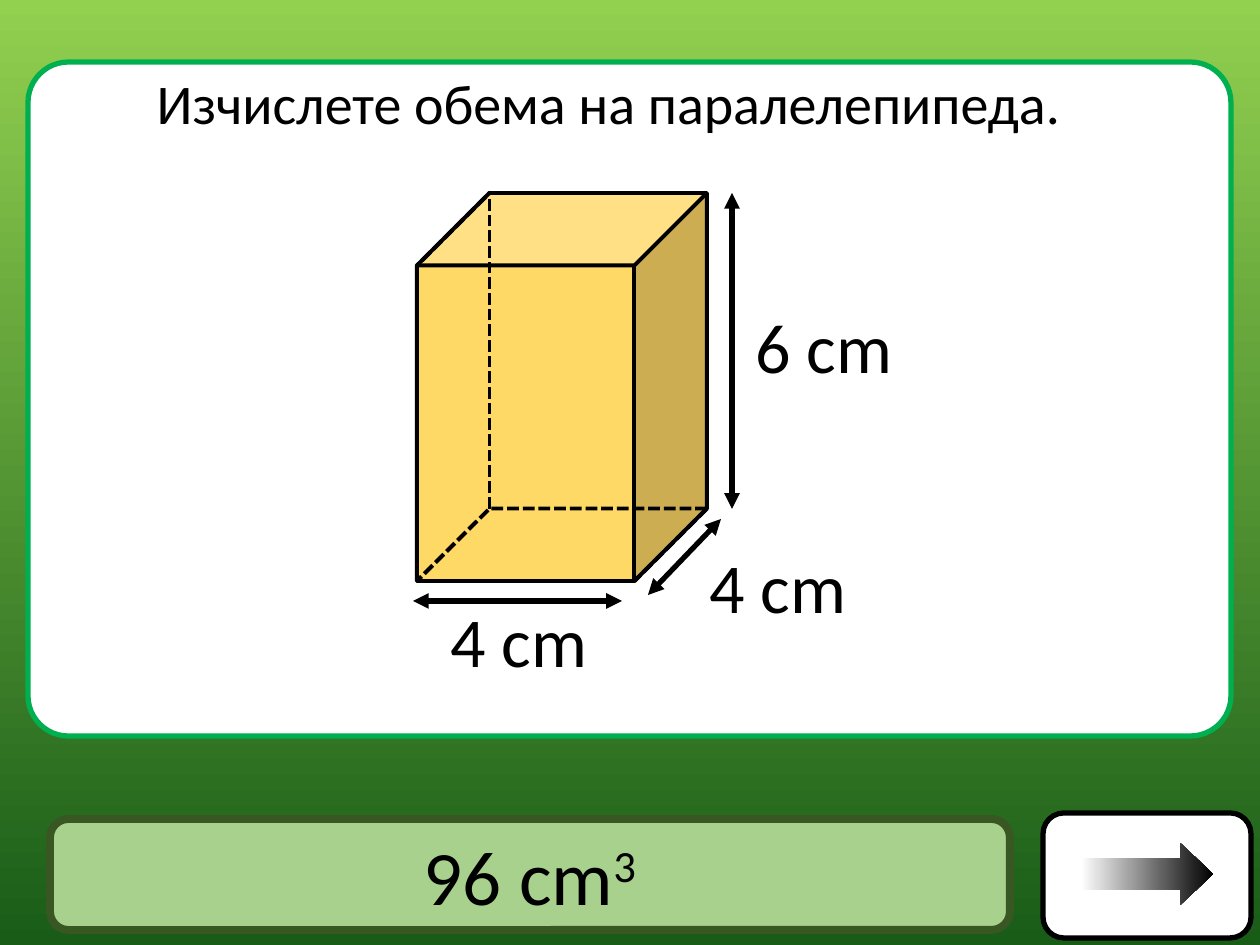
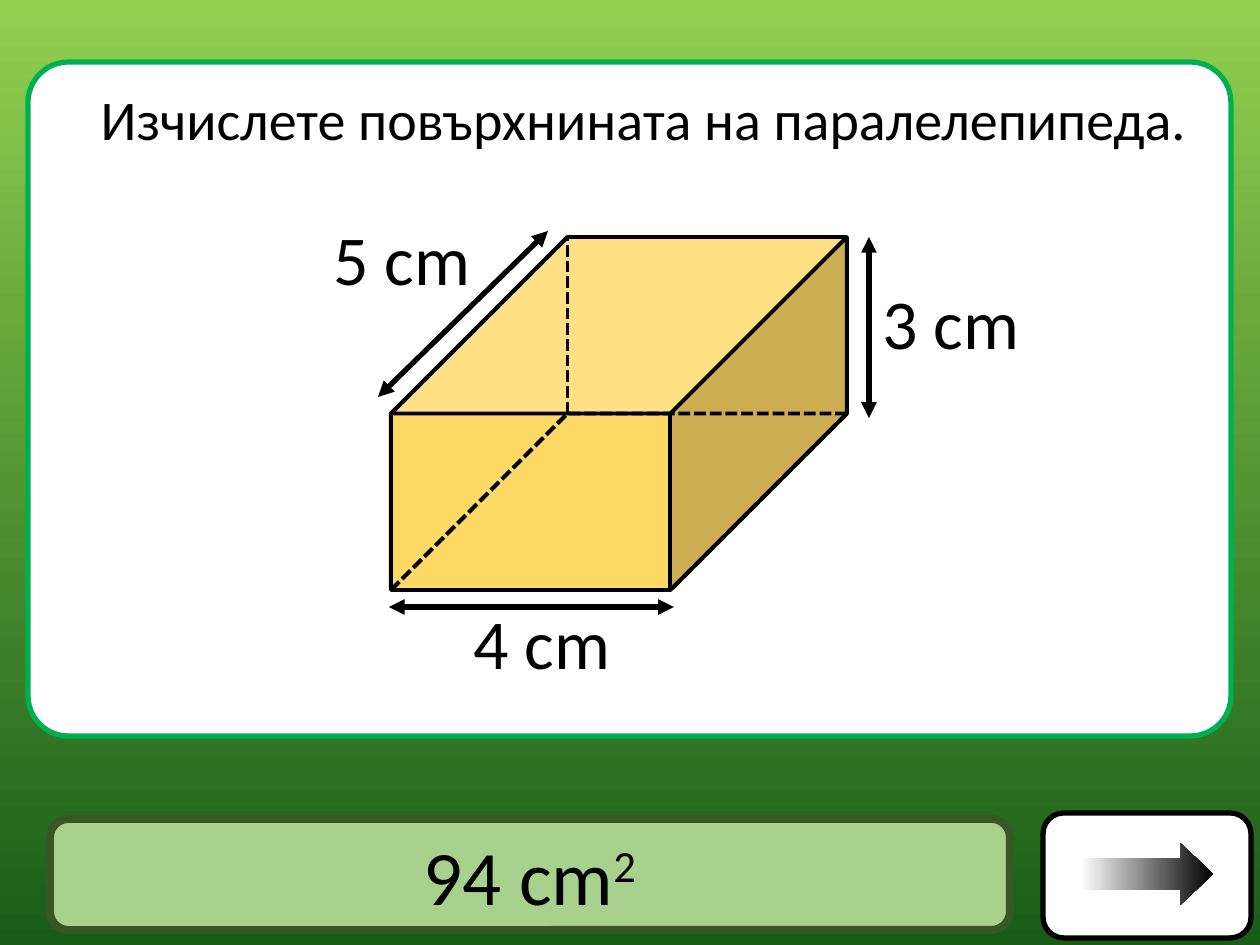
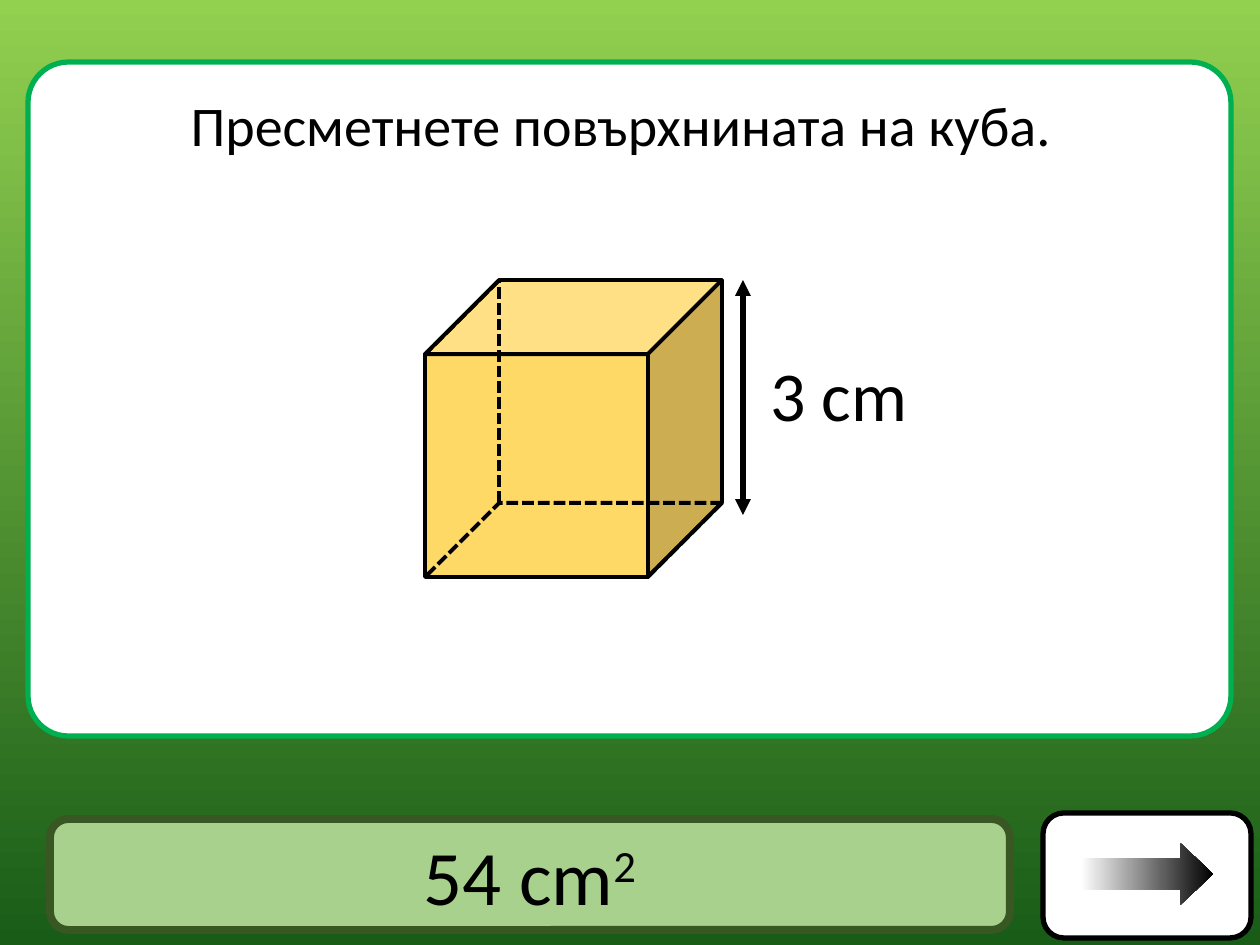
from pptx import Presentation
from pptx.dml.color import RGBColor
from pptx.enum.dml import MSO_LINE
from pptx.enum.shapes import MSO_CONNECTOR, MSO_SHAPE
from pptx.enum.text import MSO_ANCHOR, MSO_AUTO_SIZE, PP_ALIGN
from pptx.oxml.ns import qn
from pptx.util import Inches, Pt
from lxml import etree

# Enum members
ROUND, ARROW, CUBE = (MSO_SHAPE.ROUNDED_RECTANGLE, MSO_SHAPE.RIGHT_ARROW,
                      MSO_SHAPE.CUBE)
STRAIGHT, DASH = MSO_CONNECTOR.STRAIGHT, MSO_LINE.SQUARE_DOT
TOP, MIDDLE = MSO_ANCHOR.TOP, MSO_ANCHOR.MIDDLE
LEFT, CENTER = PP_ALIGN.LEFT, PP_ALIGN.CENTER
GROW = MSO_AUTO_SIZE.SHAPE_TO_FIT_TEXT

# Shared look
WIDE, HIGH = 1260, 945
SCALE = Inches(10) / WIDE
FONT = "Calibri"
BLACK, WHITE = "000000", "FFFFFF"
LIME, FOREST = "92D050", "185C18"
MINT, OLIVE, GREEN, GOLD = "A9D18E", "385723", "00B050", "FFD966"
PANEL = (28, 62, 1203, 674)
ANSWER = (50, 819, 960, 111)
BUTTON = (1043, 813, 208, 125)
NEXT = (1081, 843, 132, 62)
LABEL = (164, 97)
TITLE_H = 81

# Each task: title, its left, top and width, solid, edges with labels, answer
TASKS = [
    dict(title="Изчислете обема на паралелепипеда.", spot=(144, 62, 937),
         solid=(417, 193, 290, 388), depth=0.25,
         edges=[((732, 193, 732, 509), "6 cm", (742, 297)),
                ((622, 601, 413, 601), "4 cm", (437, 591)),
                ((721, 519, 648, 595), "4 cm", (696, 537))],
         answer=("96 cm", "3")),
    dict(title="Изчислете повърхнината на паралелепипеда.",
         spot=(88, 78, 1121),
         solid=(391, 237, 456, 353), depth=0.5,
         edges=[((869, 237, 869, 418), "3 cm", (869, 273)),
                ((548, 231, 378, 397), "5 cm", (320, 209)),
                ((674, 607, 389, 607), "4 cm", (460, 593))],
         answer=("94 cm", "2")),
    dict(title="Пресметнете повърхнината на куба.", spot=(178, 84, 893),
         solid=(425, 280, 297, 297), depth=0.25,
         edges=[((743, 280, 743, 515), "3 cm", (757, 345))],
         answer=("54 cm", "2")),
]


def px(*nums):
    return [round(n * SCALE) for n in nums]


def tint(code):
    return RGBColor.from_string(code)


def put(obj, **vals):
    for name, val in vals.items():
        setattr(obj, name, val)


def blend(fill, first, last, angle):
    fill.gradient()
    fill.gradient_angle = angle
    for stop, code, spot in zip(fill.gradient_stops, (first, last), (0, 1)):
        stop.color.rgb = tint(code)
        stop.position = spot


def shape(slide, kind, box, fill=None, line=None, width=0, adj=None):
    item = slide.shapes.add_shape(kind, *px(*box))
    item.shadow.inherit = False
    if fill:
        item.fill.solid()
        item.fill.fore_color.rgb = tint(fill)
    else:
        item.fill.background()
    if line:
        item.line.color.rgb = tint(line)
        item.line.width = Pt(width)
    else:
        item.line.fill.background()
    for spot, val in enumerate(adj or ()):
        item.adjustments[spot] = val
    return item


def write(item, text, size, align, power="", **frame):
    put(item.text_frame, **frame)
    para = item.text_frame.paragraphs[0]
    para.alignment = align
    for part in filter(None, (text, power)):
        run = para.add_run()
        run.text = part
        put(run.font, name=FONT, size=Pt(size), bold=False)
        run.font.color.rgb = tint(BLACK)
    if power:
        run.font._element.set("baseline", "30000")


def title(slide, text, spot, panel):
    item = slide.shapes.title
    left, top, width, height = px(*spot, TITLE_H)
    put(item, left=left, top=top, width=width, height=height)
    write(item, text, 32, LEFT, word_wrap=False, auto_size=GROW,
          vertical_anchor=TOP)
    panel.element.addnext(item.element)


def label(slide, text, spot):
    item = slide.shapes.add_textbox(*px(*spot, *LABEL))
    write(item, text, 40, CENTER, word_wrap=False, auto_size=GROW)


def span(slide, ends):
    """Draw a double-headed arrow along an edge."""
    item = slide.shapes.add_connector(STRAIGHT, *px(*ends))
    item.line.color.rgb = tint(BLACK)
    item.line.width = Pt(3)
    line = item.line._get_or_add_ln()
    for tag in ("a:headEnd", "a:tailEnd"):
        etree.SubElement(line, qn(tag)).set("type", "triangle")
    etree.SubElement(item.element.spPr, qn("a:effectLst"))


def solid(slide, box, depth):
    """Draw the solid, then its hidden edges as a turned dashed outline."""
    shape(slide, CUBE, box, GOLD, BLACK, 2.25, [depth])
    back = shape(slide, CUBE, box, None, BLACK, 2.25, [depth])
    back.rotation = 180
    back.line.dash_style = DASH


def base(slide, answer):
    """Draw the next button, the answer bar and the panel."""
    shape(slide, ROUND, BUTTON, WHITE, BLACK, 3)
    blend(shape(slide, ARROW, NEXT, adj=[0.5, 0.53]).fill, WHITE, BLACK, 0)
    bar = shape(slide, ROUND, ANSWER, MINT, OLIVE, 4.5)
    text, power = answer
    write(bar, text, 44, CENTER, power, vertical_anchor=MIDDLE)
    return shape(slide, ROUND, PANEL, WHITE, GREEN, 3, [0.06])


def build(deck, task):
    slide = deck.slides.add_slide(deck.slide_layouts[5])
    panel = base(slide, task["answer"])
    title(slide, task["title"], task["spot"], panel)
    solid(slide, task["solid"], task["depth"])
    for ends, text, spot in task["edges"]:
        span(slide, ends)
        label(slide, text, spot)


def main():
    deck = Presentation()
    deck.slide_width, deck.slide_height = px(WIDE, HIGH)
    blend(deck.slide_master.background.fill, LIME, FOREST, 270)
    for task in TASKS:
        build(deck, task)
    deck.save("out.pptx")


if __name__ == "__main__":
    main()
